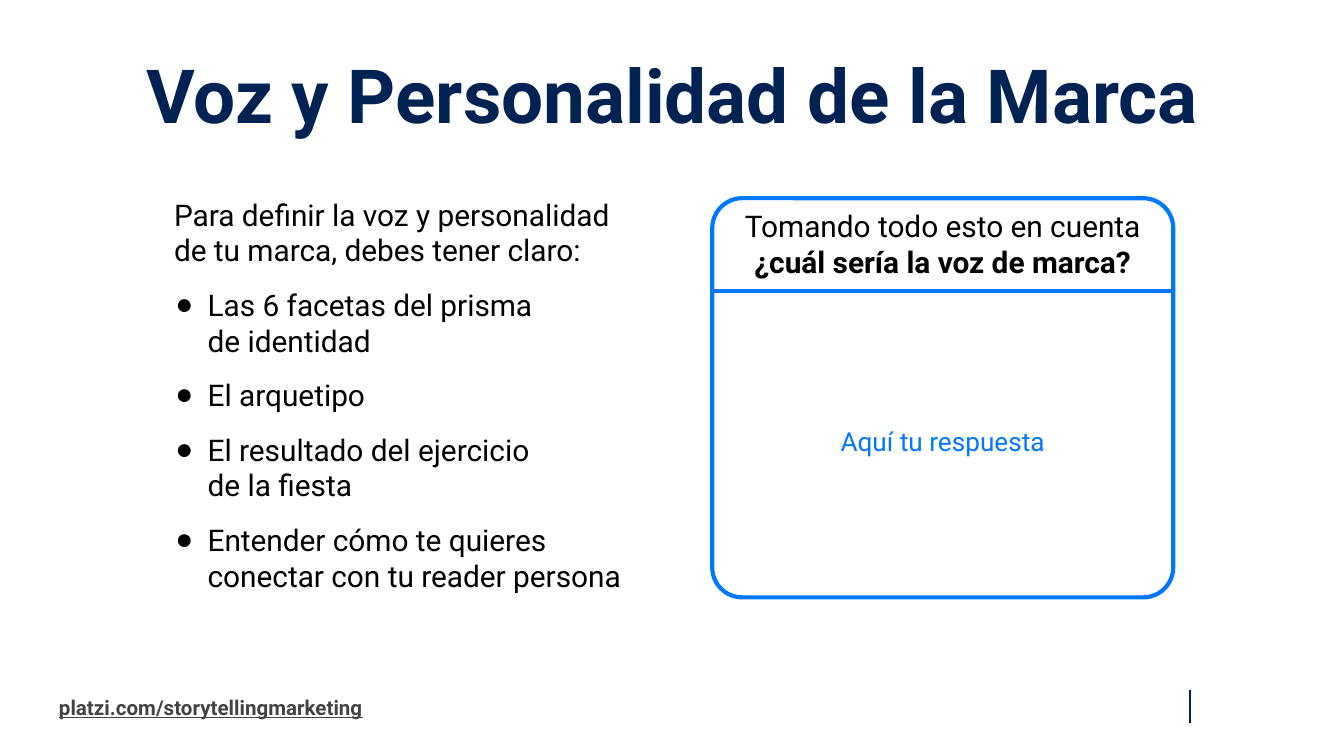
from lxml import etree
from pptx import Presentation, util as u
from pptx.dml.color import RGBColor
from pptx.enum import shapes, text
from pptx.oxml import ns

PX = 4572
FONT = "Roboto"
NAVY, BLUE, BLACK, GRAY = "012354", "0077FF", "000000", "434343"
MID, TOP = text.MSO_ANCHOR.MIDDLE, text.MSO_ANCHOR.TOP
MARK = "●"


def px(*vals):
    return [u.Emu(v * PX) for v in vals]


def paint(color, code):
    color.rgb = RGBColor.from_string(code)


def node(root, tag, **attrs):
    return etree.SubElement(root, ns.qn(tag), **attrs)


def add_run(para, words, size, code, bold=False, under=None):
    for i, line in enumerate(words.split("\n")):
        if i:
            para.add_line_break()
        run = para.add_run()
        run.text = line
        font = run.font
        font.name, font.size = FONT, u.Pt(size)
        font.bold, font.underline = bold, under
        paint(font.color, code)


def set_frame(frame, anchor, left=20):
    frame.word_wrap = True
    frame.auto_size = text.MSO_AUTO_SIZE.NONE
    frame.vertical_anchor = anchor
    frame.margin_left, frame.margin_top = px(left, 20)
    frame.margin_right, frame.margin_bottom = px(20, 20)
    return frame.paragraphs[0]


def add_text(slide, box, anchor=MID, left=20, center=True):
    frame = slide.shapes.add_textbox(*px(*box)).text_frame
    para = set_frame(frame, anchor, left)
    if center:
        para.alignment = text.PP_ALIGN.CENTER
    return frame, para


def add_title(slide, box, words):
    shape = slide.shapes.title
    shape.left, shape.top, shape.width, shape.height = px(*box)
    para = set_frame(shape.text_frame, TOP)
    para.alignment = text.PP_ALIGN.CENTER
    para.line_spacing = 0.8
    add_run(para, words, 40, NAVY, True)


def add_item(frame, words):
    para = frame.add_paragraph()
    left, hang = px(50, -48)
    props = para._p.get_or_add_pPr()
    props.set("marL", str(left))
    props.set("indent", str(hang))
    node(node(props, "a:buClr"), "a:srgbClr", val=BLACK)
    node(props, "a:buFont", typeface="Arial")
    node(props, "a:buChar", char=MARK)
    para.space_before = u.Pt(10)
    add_run(para, words, 16, BLACK)
    return para


def add_line(slide, ends, code, width):
    line = slide.shapes.add_connector(shapes.MSO_CONNECTOR.STRAIGHT, *px(*ends))
    paint(line.line.color, code)
    line.line.width = u.Pt(width)
    node(line._element.spPr, "a:effectLst")


def add_card(slide, box):
    card = slide.shapes.add_shape(shapes.MSO_SHAPE.ROUNDED_RECTANGLE, *px(*box))
    card.adjustments[0] = 0.075
    card.shadow.inherit = False
    card.fill.background()
    paint(card.line.color, BLUE)
    card.line.width = u.Pt(2.25)


def main():
    deck = Presentation()
    deck.slide_width, deck.slide_height = px(2000, 1125)
    slide = deck.slides.add_slide(deck.slide_layouts[5])

    site = add_text(slide, (68, 1018, 622, 68), center=False)[1]
    add_run(site, "platzi.com/storytellingmarketing", 11, GRAY, True, True)
    add_line(slide, (1771, 1027, 1771, 1076), NAVY, 1.5)
    add_title(slide, (68, 78, 1864, 126), "Voz y Personalidad de la Marca")

    add_card(slide, (1060, 295, 686, 594))
    frame, intro = add_text(slide, (247, 272, 718, 696), TOP, 12, False)
    add_run(intro, "Para definir la voz y personalidad de tu marca, debes tener claro:", 16, BLACK)
    for words in (
        "Las 6 facetas del prisma\nde identidad",
        "El arquetipo",
        "El resultado del ejercicio\nde la fiesta",
        "Entender cómo te quieres conectar con tu reader persona",
    ):
        last = add_item(frame, words)
    last.space_after = u.Pt(10)

    ask = add_text(slide, (1060, 316, 686, 94))[1]
    add_run(ask, "Tomando todo esto en cuenta ", 16, BLACK)
    add_run(ask, "¿cuál sería la voz de marca?", 16, BLACK, True)
    add_line(slide, (1062, 433, 1742, 433), BLUE, 2.25)
    reply = add_text(slide, (1112, 467, 582, 380))[1]
    add_run(reply, "Aquí tu respuesta", 14, BLUE)

    deck.save("out.pptx")


if __name__ == "__main__":
    main()
